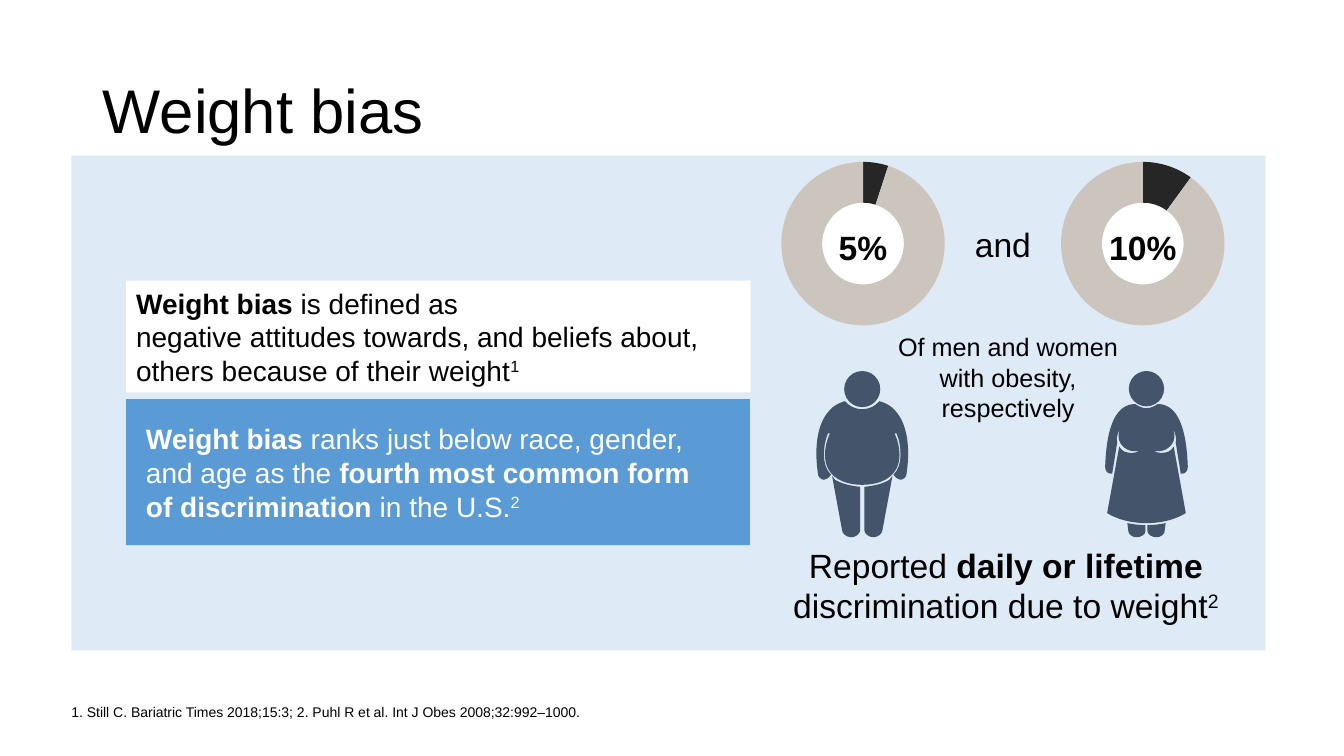
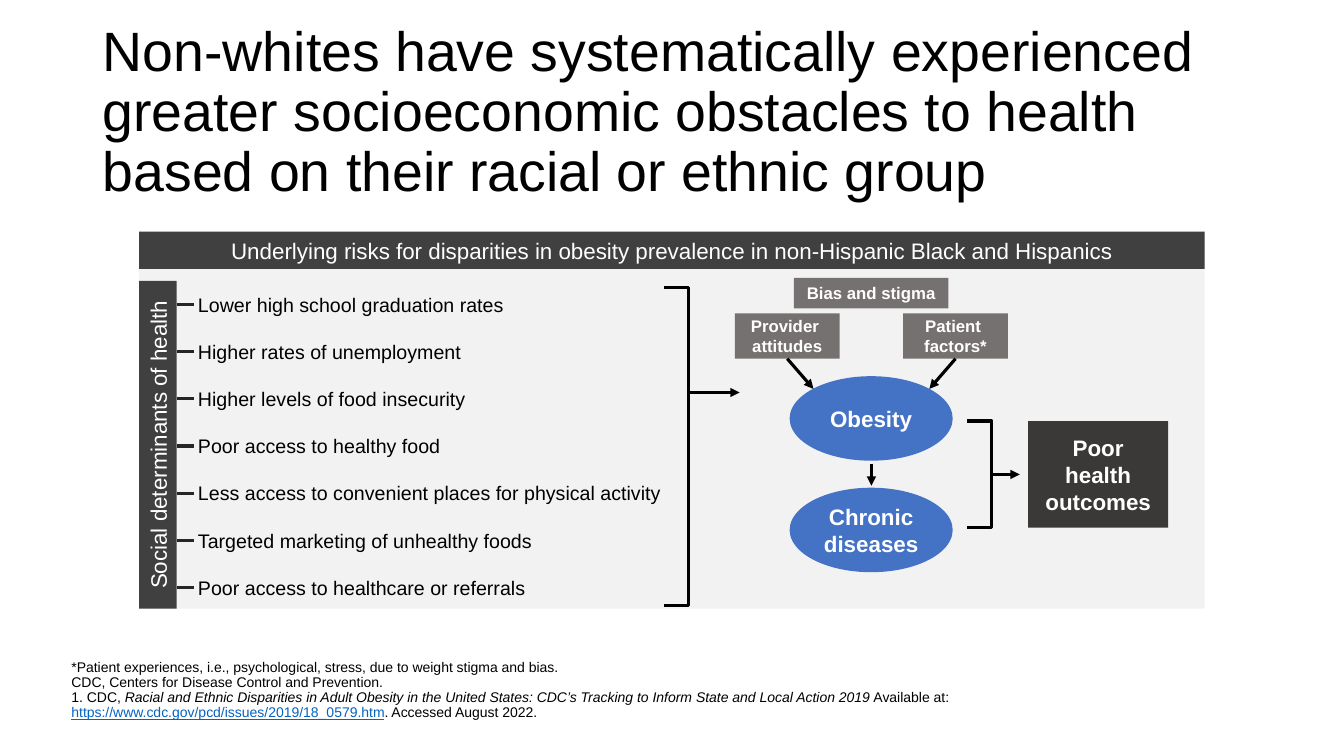
from lxml.etree import SubElement
from pptx import Presentation
from pptx.chart.data import CategoryChartData
from pptx.dml.color import RGBColor
from pptx.enum.chart import XL_CHART_TYPE
from pptx.enum.shapes import MSO_CONNECTOR, MSO_SHAPE
from pptx.enum.text import MSO_ANCHOR, MSO_AUTO_SIZE, PP_ALIGN
from pptx.oxml.ns import qn
from pptx.util import Cm, Pt

FONT = "Arial"
BLACK, WHITE = "000000", "FFFFFF"
PALE_BLUE, BLUE, OVAL_BLUE, LINK = "DEEBF7", "5B9BD5", "4472C4", "0563C1"
SLATE, CHARCOAL, INK, SAND = "44546A", "404040", "262626", "CCC5BD"
PALE_GREY, GREY, OUTCOME = "F2F2F2", "767171", "3B3838"

LEFT, CENTER = PP_ALIGN.LEFT, PP_ALIGN.CENTER
TOP, MIDDLE, BOTTOM = MSO_ANCHOR.TOP, MSO_ANCHOR.MIDDLE, MSO_ANCHOR.BOTTOM

# Figures are drawn in hundredths of an inch: x from the body axis, y from the slide top.
# Two numbers make a straight segment, six make a Bezier curve.
UNIT = 0.0254
MAN_AXIS, WOMAN_AXIS = 855.5, 1137.5
MAN_BODY = [
    (0, 406), (-7, 406, -13, 403, -17, 398), (-20, 399, -28, 401, -34, 409),
    (-44, 421, -48, 442, -44, 470), (-44, 473, -41, 476, -38, 476),
    (-34, 475, -32, 473, -31, 471), (-36, 466, -38, 459, -38, 451),
    (-38, 444, -37, 437, -34, 430), (-32, 430), (-35, 436, -37, 444, -37, 451),
    (-37, 473, -19, 481, 0, 481),
]
MAN_LEG = [
    (-30, 472), (-20, 526), (-20, 529, -16, 533, -11, 533),
    (-6, 533, -2, 529, -2, 526), (-2, 483), (-12, 482, -20, 480, -27, 476),
]
WOMAN_BODY = [
    (0, 405), (-4, 405, -8, 403, -11, 401), (-13, 401),
    (-14, 401, -19, 401, -25, 406), (-35, 415, -40, 434, -41, 463),
    (-41, 467, -39, 470, -35, 470), (-34, 470), (-29, 439),
    (-30, 435, -29, 432, -28, 429), (-27, 427, -26, 426, -25, 425), (-26, 426),
    (-30, 433, -27, 442, -19, 446), (-15, 448, -11, 448, -7, 447),
    (-11, 450, -17, 450, -22, 448), (-24, 447, -26, 445, -27, 443),
    (-39, 509), (-39, 509, -25, 519, 0, 519),
]
WOMAN_LEG = [
    (-19, 519), (-18, 527), (-18, 530, -14, 533, -10, 533),
    (-5, 533, -1, 530, -1, 527), (-1, 521), (-8, 521, -14, 520, -19, 519),
]


def rgb(color):
    return RGBColor.from_string(color)


def write(tf, text, size, color=BLACK, align=LEFT, bold=False, spacing=None):
    """Fill a frame with one paragraph: a string or a list of (text, style)."""
    p = tf.paragraphs[0]
    p.alignment = align
    if spacing:
        p.line_spacing = spacing
    for part, style in [(text, "")] if isinstance(text, str) else text:
        for i, line in enumerate(part.split("\n")):
            if i:
                p.add_line_break()
                SubElement(p._p[-1], qn("a:rPr"), sz=str(round(size * 100)))
            if not line:
                continue
            r = p.add_run()
            r.text = line
            r.font.name, r.font.size = FONT, Pt(size)
            r.font.bold = bold or style == "bold"
            r.font.italic = style == "italic"
            r.font.underline = style == "link"
            r.font.color.rgb = rgb(LINK if style == "link" else color)
            if style == "sup":
                r._r.get_or_add_rPr().set("baseline", "30000")


def fill_plain(sp, fill):
    sp.shadow.inherit = False
    sp.line.fill.background()
    sp.fill.solid()
    sp.fill.fore_color.rgb = rgb(fill)


def add_block(s, x, y, w, h, fill, shape=MSO_SHAPE.RECTANGLE):
    sp = s.shapes.add_shape(shape, Cm(x), Cm(y), Cm(w), Cm(h))
    fill_plain(sp, fill)
    return sp


def set_frame(tf, anchor, inset_x, inset_y, wrap=True):
    tf.word_wrap = wrap
    tf.auto_size = MSO_AUTO_SIZE.NONE
    tf.vertical_anchor = anchor
    tf.margin_left = tf.margin_right = Cm(inset_x)
    tf.margin_top = tf.margin_bottom = Cm(inset_y)


def add_label(s, x, y, w, h, text, size, fill, color=WHITE, align=CENTER,
              bold=False, inset=0.0, shape=MSO_SHAPE.RECTANGLE):
    """Filled shape with vertically centred text."""
    sp = add_block(s, x, y, w, h, fill, shape)
    set_frame(sp.text_frame, MIDDLE, inset, 0)
    write(sp.text_frame, text, size, color, align, bold)
    return sp


def add_text(s, x, y, w, h, text, size, align=LEFT, bold=False, wrap=True):
    tf = s.shapes.add_textbox(Cm(x), Cm(y), Cm(w), Cm(h)).text_frame
    set_frame(tf, TOP, 0.25, 0.13, wrap)
    write(tf, text, size, BLACK, align, bold)


def add_title_slide(prs, title, size, footnote):
    """Title-only slide with a footnote block that grows upwards."""
    s = prs.slides.add_slide(prs.slide_layouts[5])
    sp = s.shapes.title
    sp.left, sp.top, sp.width, sp.height = Cm(2.34), Cm(1.02), Cm(29.21), Cm(3.68)
    set_frame(sp.text_frame, MIDDLE, 0.25, 0.13)
    write(sp.text_frame, title, size, spacing=0.9)
    tf = s.shapes.add_textbox(Cm(1.8), Cm(16.67), Cm(29.41), Cm(1.5)).text_frame
    set_frame(tf, BOTTOM, 0, 0)
    write(tf, footnote, 10, spacing=0.9)
    return s


def add_line(s, x1, y1, x2, y2, color=BLACK, arrow=True):
    cxn = s.shapes.add_connector(MSO_CONNECTOR.STRAIGHT, Cm(x1), Cm(y1), Cm(x2), Cm(y2))
    cxn.line.color.rgb = rgb(color)
    cxn.line.width = Pt(2.25)
    sp_pr = cxn._element.spPr
    if arrow:
        SubElement(sp_pr.find(qn("a:ln")), qn("a:tailEnd"), type="triangle")
    SubElement(sp_pr, qn("a:effectLst"))
    return cxn


def add_bracket(s, x, y, h, tip, arrow_end):
    """Square bracket whose tip, a share of its height, carries an arrow."""
    w = 1.22
    sp = s.shapes.add_shape(MSO_SHAPE.RIGHT_BRACE, Cm(x), Cm(y), Cm(w), Cm(h))
    sp.shadow.inherit = False
    sp.fill.background()
    sp.line.color.rgb = rgb(BLACK)
    sp.line.width = Pt(2.25)
    sp.adjustments[0], sp.adjustments[1] = 0, tip
    add_line(s, x + w - 0.45, y + h * tip, arrow_end, y + h * tip)


def add_donut(s, cx, percent):
    cy, w, h, hole = 6.14, 7.29, 4.83, 2.82
    add_block(s, cx - hole / 2, cy - hole / 2, hole, hole, WHITE, MSO_SHAPE.OVAL)
    data = CategoryChartData()
    data.categories = ["1", "2"]
    data.add_series("Series 1", [percent, 100 - percent])
    chart = s.shapes.add_chart(XL_CHART_TYPE.DOUGHNUT, Cm(cx - w / 2), Cm(cy - h / 2),
                               Cm(w), Cm(h), data).chart
    chart.has_title = chart.has_legend = False
    chart.font.name, chart.font.size = FONT, Pt(10)
    chart.font.color.rgb = rgb(BLACK)
    plot = chart.plots[0]
    plot.vary_by_categories = False
    plot._element.find(qn("c:holeSize")).set("val", "61")
    for i, color in enumerate((INK, SAND)):
        fmt = plot.series[0].points[i].format
        fmt.fill.solid()
        fmt.fill.fore_color.rgb = rgb(color)
        fmt.line.fill.background()
    set_plot_area(chart, 4.12 / w, 4.12 / h)
    add_text(s, cx - 1.5, 5.59, 3, 1.27, f"{percent}%", 24, CENTER, bold=True)


def set_plot_area(chart, w, h):
    """Centre the plot area, sized as shares of the chart."""
    area = chart._chartSpace.chart.plotArea
    layout = area.find(qn("c:layout"))
    if layout is None:
        layout = area.makeelement(qn("c:layout"))
        area.insert(0, layout)
    manual = SubElement(layout, qn("c:manualLayout"))
    for tag, val in (("layoutTarget", "inner"), ("xMode", "edge"), ("yMode", "edge"),
                     ("x", (1 - w) / 2), ("y", (1 - h) / 2), ("w", w), ("h", h)):
        SubElement(manual, qn(f"c:{tag}"), val=str(val))


def pairs(seg):
    return list(zip(seg[::2], seg[1::2]))


def mirror(outline):
    """Reflect an outline in its axis and run it backwards."""
    flipped = [[(-x, y) for x, y in pairs(seg)] for seg in outline]
    result = [flipped[-1][-1]]
    for before, seg in reversed(list(zip(flipped, flipped[1:]))):
        result.append(sum(reversed([before[-1]] + seg[:-1]), ()))
    return result


def add_outline(s, axis, outline):
    """Closed freeform; curved segments become real Bezier curves."""
    segs = [[(Cm((axis + x) * UNIT), Cm(y * UNIT)) for x, y in pairs(seg)] for seg in outline]
    builder = s.shapes.build_freeform(*segs[0][0], scale=1.0)
    builder.add_line_segments([seg[-1] for seg in segs[1:]], close=True)
    sp = builder.convert_to_shape()
    fill_plain(sp, SLATE)
    path = next(sp._element.iter(qn("a:path")))
    for seg, straight in zip(segs[1:], path.findall(qn("a:lnTo"))):
        if len(seg) == 3:
            curve = path.makeelement(qn("a:cubicBezTo"))
            for x, y in seg:
                SubElement(curve, qn("a:pt"), x=str(x - sp.left), y=str(y - sp.top))
            path.replace(straight, curve)


def add_figure(s, axis, body, leg, head):
    """Symmetric person from half a body, one leg and a head diameter."""
    for outline in (body + mirror(body)[1:], leg, mirror(leg)):
        add_outline(s, axis, outline)
    add_block(s, axis * UNIT - head / 2, 9.35, head, head, SLATE, MSO_SHAPE.OVAL)


def build_weight_bias(prs):
    s = add_title_slide(
        prs, "Weight bias", 44,
        "1. Still C. Bariatric Times 2018;15:3; 2. Puhl R et al. Int J Obes 2008;32:992–1000.")
    add_block(s, 1.8, 3.92, 30.1, 12.47, PALE_BLUE)
    add_label(s, 3.18, 7.07, 15.74, 2.82, [
        ("Weight bias", "bold"),
        (" is defined as \nnegative attitudes towards, and beliefs about, "
         "others because of their weight", ""), ("1", "sup"),
    ], 20, WHITE, BLACK, LEFT, inset=0.25)
    add_label(s, 3.18, 10.06, 15.72, 3.68, [
        ("Weight bias ", "bold"), ("ranks just below race, gender, and age as the ", ""),
        ("fourth most common form \nof discrimination", "bold"),
        (" in the U.S.", ""), ("2", "sup"),
    ], 20, BLUE, align=LEFT, inset=0.5)

    donuts = {21.75: 5, 28.8: 10}
    for cx, percent in donuts.items():
        add_donut(s, cx, percent)
    add_text(s, sum(donuts) / 2 - 1.32, 5.5, 2.64, 1.27, "and", 24, CENTER)
    add_figure(s, MAN_AXIS, MAN_BODY, MAN_LEG, 0.91)
    add_figure(s, WOMAN_AXIS, WOMAN_BODY, WOMAN_LEG, 0.89)
    add_text(s, 22.08, 8.23, 6.65, 2.57,
             "Of men and women with obesity, respectively", 18, CENTER)
    add_text(s, 18.24, 13.6, 14.22, 2.31, [
        ("Reported ", ""), ("daily or lifetime ", "bold"),
        ("discrimination due to weight", ""), ("2", "sup")], 24, CENTER)


def build_obstacles(prs):
    s = add_title_slide(
        prs, "Non-whites have systematically experienced greater socioeconomic obstacles "
        "to health \nbased on their racial or ethnic group", 39.6, [
            ("*Patient experiences, i.e., psychological, stress, due to weight stigma and bias.\n"
             "CDC, Centers for Disease Control and Prevention.\n1. CDC, ", ""),
            ("Racial and Ethnic Disparities in Adult Obesity in the United States: "
             "CDC’s Tracking to Inform State and Local Action 2019 ", "italic"),
            ("Available at: ", ""),
            ("https://www.cdc.gov/pcd/issues/2019/18_0579.htm", "link"),
            (". Accessed August 2022.", "")])
    add_block(s, 3.51, 5.84, 26.85, 9.5, PALE_GREY)
    add_label(s, 3.51, 5.84, 26.85, 0.94,
              "Underlying risks for disparities in obesity prevalence in "
              "non-Hispanic Black and Hispanics", 16, CHARCOAL)
    side = add_label(s, 3.51, 7.08, 0.94, 8.26, "Social determinants of health", 16, CHARCOAL)
    side.text_frame._txBody.bodyPr.set("vert", "vert270")

    determinants = (
        "Lower high school graduation rates",
        "Higher rates of unemployment",
        "Higher levels of food insecurity",
        "Poor access to healthy food",
        "Less access to convenient places for physical activity",
        "Targeted marketing of unhealthy foods",
        "Poor access to healthcare or referrals",
    )
    for i, text in enumerate(determinants):
        y = 7.67 + 1.19 * i
        add_line(s, 4.45, y, 4.88, y, INK, arrow=False)
        add_text(s, 4.74, y - 0.43, 12.32, 0.86, text, 14, wrap=False)
    add_bracket(s, 16.74, 7.25, 8, 0.33, 18.64)

    cx = 21.96
    add_label(s, cx - 1.95, 7, 3.89, 0.77, "Bias and stigma", 12, GREY, bold=True)
    for y, text in ((9.48, "Obesity"), (12.29, "Chronic diseases")):
        add_label(s, cx - 2.06, y, 4.11, 2.13, text, 16, OVAL_BLUE, bold=True,
                  inset=0.2, shape=MSO_SHAPE.OVAL)
    for side_sign, text in ((-1, "Provider \nattitudes"), (1, "Patient \nfactors*")):
        x = cx + side_sign * 2.12
        factor = add_label(s, x - 1.32, 7.9, 2.64, 1.14, text, 12, GREY, bold=True)
        cxn = add_line(s, x, 9.04, cx + side_sign * 1.46, 9.8)
        cxn.begin_connect(factor, 2)
    add_line(s, cx, 11.68, cx, 12.24)
    add_bracket(s, 24.38, 10.61, 2.69, 0.5, 25.7)
    add_label(s, 25.91, 10.61, 3.53, 2.69, "Poor health outcomes", 16, OUTCOME,
              bold=True, inset=0.3)


def main():
    prs = Presentation()
    prs.slide_width, prs.slide_height = Cm(33.87), Cm(19.05)
    build_weight_bias(prs)
    build_obstacles(prs)
    prs.save("out.pptx")


if __name__ == "__main__":
    main()
